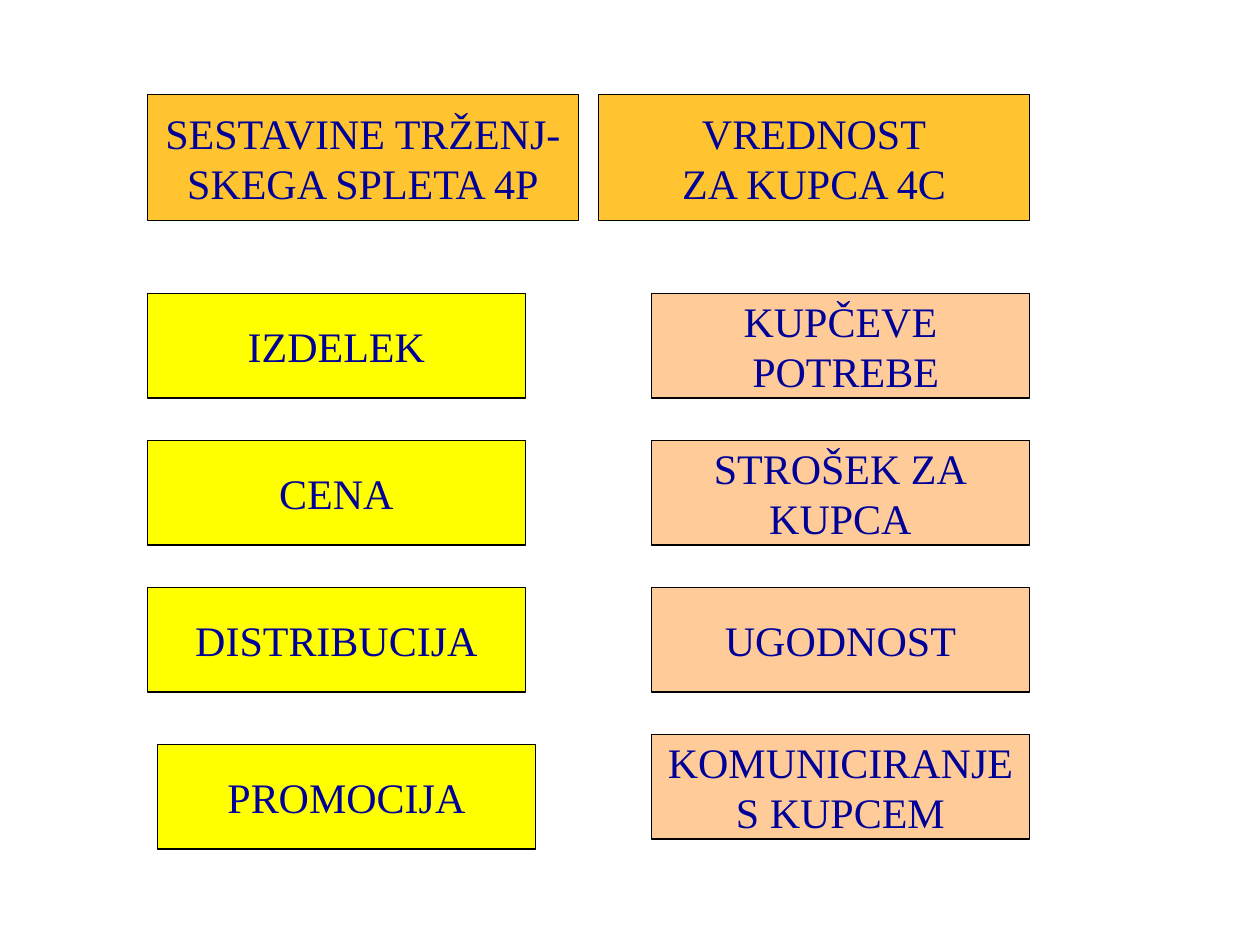
from dataclasses import dataclass

from pptx import Presentation
from pptx.dml.color import RGBColor
from pptx.enum.shapes import MSO_SHAPE
from pptx.enum.text import MSO_ANCHOR, PP_ALIGN
from pptx.slide import Slide
from pptx.util import Inches, Pt

AMBER = RGBColor(0xFF, 0xC4, 0x2F)
YELLOW = RGBColor(0xFF, 0xFF, 0x00)
PEACH = RGBColor(0xFF, 0xCC, 0x99)
NAVY = RGBColor(0x00, 0x00, 0x99)
BLACK = RGBColor(0x00, 0x00, 0x00)

BLANK_LAYOUT = 6
LEFT_EDGE, RIGHT_EDGE = 1.17, 8.17
HEADER_TOP, HEADER_WIDTH, HEADER_HEIGHT = 0.75, 3.42, 1
ROWS_TOP, ROW_PITCH = 2.33, 3.5 / 3
ITEM_WIDTH, ITEM_HEIGHT = 3, 0.83
PROMOTION_SHIFT = 0.08

ITEM_PAIRS = [
    ("IZDELEK", "KUPČEVE\n POTREBE"),
    ("CENA", "STROŠEK ZA\nKUPCA"),
    ("DISTRIBUCIJA", "UGODNOST"),
    ("PROMOCIJA", "KOMUNICIRANJE\nS KUPCEM"),
]


@dataclass
class Box:
    text: str
    left: float
    top: float
    width: float
    height: float
    fill: RGBColor


def header(text: str, left: float) -> Box:
    return Box(text, left, HEADER_TOP, HEADER_WIDTH, HEADER_HEIGHT, AMBER)


def item(text: str, left: float, top: float, fill: RGBColor) -> Box:
    return Box(text, left, top, ITEM_WIDTH, ITEM_HEIGHT, fill)


def draw_box(slide: Slide, box: Box) -> None:
    rectangle = slide.shapes.add_shape(
        MSO_SHAPE.RECTANGLE,
        Inches(box.left), Inches(box.top), Inches(box.width), Inches(box.height),
    )
    rectangle.shadow.inherit = False
    rectangle.fill.solid()
    rectangle.fill.fore_color.rgb = box.fill
    rectangle.line.color.rgb = BLACK
    rectangle.line.width = Pt(0.75)

    frame = rectangle.text_frame
    frame.word_wrap = False
    frame.vertical_anchor = MSO_ANCHOR.MIDDLE
    frame.text = box.text
    for paragraph in frame.paragraphs:
        paragraph.alignment = PP_ALIGN.CENTER
        paragraph.font.name = "Times New Roman"
        paragraph.font.size = Pt(24)
        paragraph.font.color.rgb = NAVY


def main() -> None:
    presentation = Presentation()
    presentation.slide_width = Inches(10)
    presentation.slide_height = Inches(7.5)
    slide = presentation.slides.add_slide(presentation.slide_layouts[BLANK_LAYOUT])

    boxes = [
        header("SESTAVINE TRŽENJ-\nSKEGA SPLETA 4P", LEFT_EDGE),
        header("VREDNOST\nZA KUPCA 4C", RIGHT_EDGE - HEADER_WIDTH),
    ]
    for row, (mix_element, customer_value) in enumerate(ITEM_PAIRS):
        top = ROWS_TOP + row * ROW_PITCH
        shift = PROMOTION_SHIFT if mix_element == "PROMOCIJA" else 0
        boxes.append(item(mix_element, LEFT_EDGE + shift, top + shift, YELLOW))
        boxes.append(item(customer_value, RIGHT_EDGE - ITEM_WIDTH, top, PEACH))

    for box in boxes:
        draw_box(slide, box)
    presentation.save("out.pptx")


if __name__ == "__main__":
    main()
